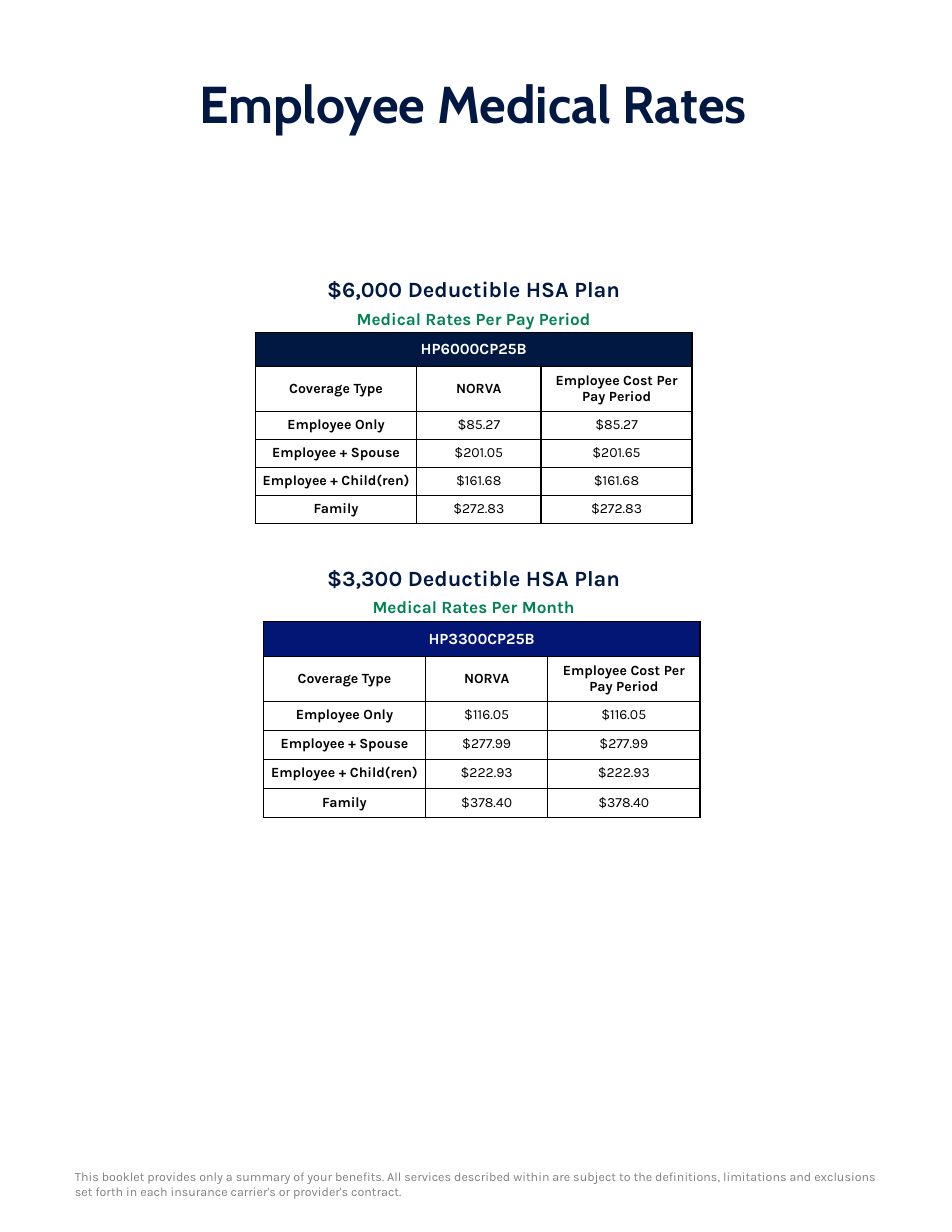
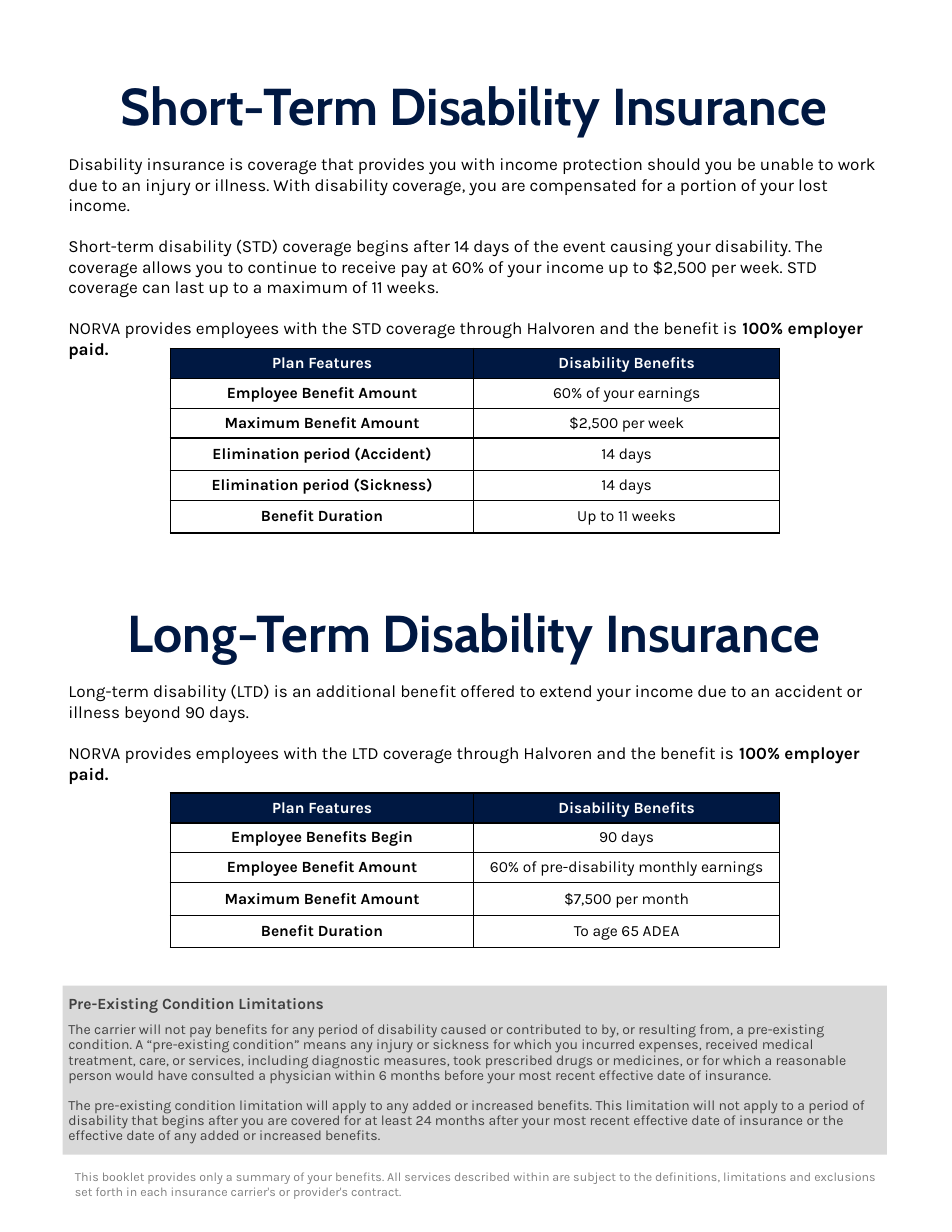
from lxml.etree import SubElement
from pptx import Presentation
from pptx.dml.color import RGBColor
from pptx.enum.shapes import MSO_SHAPE as Shape
from pptx.enum.text import MSO_ANCHOR as Anchor, PP_ALIGN as Align
from pptx.oxml import parse_xml
from pptx.oxml.ns import nsdecls, qn
from pptx.util import Inches, Pt

NAVY = RGBColor(0x00, 0x18, 0x42)
BLUE = RGBColor(0x03, 0x16, 0x75)
GREEN = RGBColor(0x00, 0x82, 0x50)
GREY = RGBColor(0x80, 0x80, 0x80)
CHARCOAL = RGBColor(0x40, 0x40, 0x40)
PALE = RGBColor(0xD9, 0xD9, 0xD9)
BLACK = RGBColor(0, 0, 0)
WHITE = RGBColor(0xFF, 0xFF, 0xFF)

HEADING_FONT, BODY_FONT = "Cabin", "Karla"
EMPLOYER, CARRIER = "NORVA", "Halvoren"
INSET = Inches(0.05)
BODY_LEFT, BODY_WIDTH = 0.56, 7.36
BODY_GAP = 13.2
PLAN_LEFT, PLAN_WIDTH = 2.28, 3.9

DISCLAIMER = (
    "This booklet provides only a summary of your beneﬁts. All services described within "
    "are subject to the deﬁnitions, limitations and exclusions set forth in each insurance "
    "carrier's or provider's contract."
)
STD_TEXT = [
    "Disability insurance is coverage that provides you with income protection should you be "
    "unable to work due to an injury or illness. With disability coverage, you are compensated "
    "for a portion of your lost income.",
    "Short-term disability (STD) coverage begins after 14 days of the event causing your "
    "disability. The coverage allows you to continue to receive pay at 60% of your income up "
    "to $2,500 per week. STD coverage can last up to a maximum of 11 weeks.",
]
LTD_TEXT = [
    "Long-term disability (LTD) is an additional benefit offered to extend your income due to "
    "an accident or illness beyond 90 days.",
]
STD_FEATURES = [
    ("Employee Benefit Amount", "60% of your earnings"),
    ("Maximum Benefit Amount", "$2,500 per week"),
    ("Elimination period (Accident)", "14 days"),
    ("Elimination period (Sickness)", "14 days"),
    ("Benefit Duration", "Up to 11 weeks"),
]
LTD_FEATURES = [
    ("Employee Benefits Begin", "90 days"),
    ("Employee Benefit Amount", "60% of pre-disability monthly earnings"),
    ("Maximum Benefit Amount", "$7,500 per month"),
    ("Benefit Duration", "To age 65 ADEA"),
]
LIMITATIONS = [
    "Pre-Existing Condition Limitations",
    "The carrier will not pay benefits for any period of disability caused or contributed to "
    "by, or resulting from, a pre-existing condition. A “pre-existing condition” means any "
    "injury or sickness for which you incurred expenses, received medical treatment, care, or "
    "services, including diagnostic measures, took prescribed drugs or medicines, or for which "
    "a reasonable person would have consulted a physician within 6 months before your most "
    "recent effective date of insurance.",
    "The pre-existing condition limitation will apply to any added or increased benefits. This "
    "limitation will not apply to a period of disability that begins after you are covered for "
    "at least 24 months after your most recent effective date of insurance or the effective "
    "date of any added or increased benefits.",
]
COVERAGE = ["Employee Only", "Employee + Spouse", "Employee + Child(ren)", "Family"]


def style_para(para, size, color, bold=False, font=BODY_FONT, align=Align.LEFT):
    """Format every run of a paragraph alike."""
    para.alignment = align
    for span in para.runs:
        span.font.name = font
        span.font.size = Pt(size)
        span.font.bold = bold
        span.font.color.rgb = color


def set_insets(target):
    """Give a text frame or a table cell the same narrow margin on all sides."""
    target.margin_left = target.margin_right = INSET
    target.margin_top = target.margin_bottom = INSET


def add_text(page, box, text, size, color, anchor=Anchor.TOP, **style):
    """Add a wrapping text box whose paragraphs share one format."""
    frame = page.shapes.add_textbox(*map(Inches, box)).text_frame
    frame.word_wrap = True
    frame.vertical_anchor = anchor
    frame.text = text
    for para in frame.paragraphs:
        style_para(para, size, color, **style)
    return frame


def add_title(page, box, text):
    """Add a large centred page title."""
    add_text(page, box, text, 33.3, NAVY, Anchor.MIDDLE,
             bold=True, font=HEADING_FONT, align=Align.CENTER)


def add_footer(page):
    """Add the disclaimer at the foot of the page."""
    add_text(page, (0.57, 10.37, 7.46, 0.4), DISCLAIMER, 8, GREY, Anchor.MIDDLE)


def add_borders(cell):
    """Draw a thin black line on each side of a cell."""
    props = cell._tc.get_or_add_tcPr()
    for index, side in enumerate("LRTB"):
        line = parse_xml(f'<a:ln{side} {nsdecls("a")} w="12700"/>')
        fill = SubElement(line, qn("a:solidFill"))
        SubElement(fill, qn("a:srgbClr"), val=str(BLACK))
        props.insert(index, line)


def add_grid(page, left, top, widths, heights):
    """Add an unbanded table with the given column widths and row heights."""
    size = map(Inches, (left, top, sum(widths), sum(heights)))
    table = page.shapes.add_table(len(heights), len(widths), *size).table
    table.first_row = table.horz_banding = False
    for column, width in zip(table.columns, widths):
        column.width = Inches(width)
    for row, height in zip(table.rows, heights):
        row.height = Inches(height)
    return table


def fill_cell(cell, text, size, color=BLACK, bold=False, fill=None, anchor=Anchor.MIDDLE):
    """Write centred text in a bordered cell."""
    cell.text = text
    cell.vertical_anchor = anchor
    set_insets(cell)
    style_para(cell.text_frame.paragraphs[0], size, color, bold, align=Align.CENTER)
    if fill is None:
        cell.fill.background()
    else:
        cell.fill.solid()
        cell.fill.fore_color.rgb = fill
    add_borders(cell)


def add_plan(page, top, name, period, code, band, rates, table_left, widths, heights):
    """Add a plan heading, its subheading and its table of rates below."""
    centred = dict(bold=True, align=Align.CENTER)
    add_text(page, (PLAN_LEFT, top, PLAN_WIDTH, 0.34), name, 14, NAVY, **centred)
    add_text(page, (PLAN_LEFT, top + 0.29, PLAN_WIDTH, 0.22), period, 11, GREEN, **centred)
    table = add_grid(page, table_left, top + 0.56, widths, heights)
    for column in range(3):
        fill_cell(table.cell(0, column), "" if column else code, 10, WHITE, True, band)
    table.cell(0, 0).merge(table.cell(0, 2))
    for column, label in enumerate(["Coverage Type", EMPLOYER, "Employee Cost Per Pay Period"]):
        fill_cell(table.cell(1, column), label, 9, bold=True)
    for row, (coverage, prices) in enumerate(zip(COVERAGE, rates), 2):
        for column, text in enumerate((coverage, *prices)):
            fill_cell(table.cell(row, column), text, 9, bold=column == 0, anchor=Anchor.TOP)


def add_disability(page, top, term, text, text_height, features, table_offset, heights):
    """Add a disability section: title, explanation and table of features."""
    add_title(page, (0.46, top, 7.55, 0.59), f"{term}-Term Disability Insurance")
    closing = (f"{EMPLOYER} provides employees with the {term[0]}TD coverage "
               f"through {CARRIER} and the beneﬁt is ")
    frame = add_text(page, (BODY_LEFT, top + 0.68, BODY_WIDTH, text_height),
                     "\n".join([*text, closing]), 11, BLACK)
    set_insets(frame)
    *leading, last = frame.paragraphs
    for para in leading:
        para.space_after = Pt(BODY_GAP)
    last.add_run().text = "100% employer paid."
    style_para(last, 11, BLACK)
    last.runs[-1].font.bold = True

    table = add_grid(page, 1.52, top + table_offset, [2.71, 2.73], heights)
    for column, label in enumerate(["Plan Features", "Disability Benefits"]):
        fill_cell(table.cell(0, column), label, 10, WHITE, True, NAVY)
    for row, feature in enumerate(features, 1):
        for column, value in enumerate(feature):
            fill_cell(table.cell(row, column), value, 10, bold=column == 0)


def add_limitations(page, box):
    """Add the shaded panel on pre-existing conditions."""
    panel = page.shapes.add_shape(Shape.RECTANGLE, *map(Inches, box))
    panel.shadow.inherit = False
    panel.fill.solid()
    panel.fill.fore_color.rgb = PALE
    panel.line.fill.background()
    frame = panel.text_frame
    frame.word_wrap = True
    frame.vertical_anchor = Anchor.MIDDLE
    set_insets(frame)
    frame.text = "\n".join(LIMITATIONS)
    for para, size, gap in zip(frame.paragraphs, (10, 9, 9), (6, 9.8, 0)):
        style_para(para, size, CHARCOAL, bold=size == 10)
        para.line_spacing = 0.9
        para.space_after = Pt(gap)


def build_rates(page):
    """Build the page of medical rates."""
    add_title(page, (0.56, 0.62, 7.33, 0.59), "Employee Medical Rates")
    add_plan(page, 2.41, "$6,000 Deductible HSA Plan", "Medical Rates Per Pay Period",
             "HP6000CP25B", NAVY,
             [("$85.27", "$85.27"), ("$201.05", "$201.65"),
              ("$161.68", "$161.68"), ("$272.83", "$272.83")],
             2.28, [1.44, 1.11, 1.35], [0.3, 0.35] + [0.24] * 4)
    add_plan(page, 4.99, "$3,300 Deductible HSA Plan", "Medical Rates Per Month",
             "HP3300CP25B", BLUE,
             [(price, price) for price in ("$116.05", "$277.99", "$222.93", "$378.40")],
             2.35, [1.45, 1.09, 1.36], [0.31, 0.34] + [0.26] * 4)
    add_footer(page)


def build_disability(page):
    """Build the page on short-term and long-term disability."""
    add_disability(page, 0.64, "Short", STD_TEXT, 1.65, STD_FEATURES, 2.47,
                   [0.26, 0.25, 0.25, 0.29, 0.25, 0.29])
    add_disability(page, 5.35, "Long", LTD_TEXT, 0.84, LTD_FEATURES, 1.73,
                   [0.26, 0.25, 0.25, 0.29, 0.29])
    add_limitations(page, (BODY_LEFT, 8.8, BODY_WIDTH, 1.51))
    add_footer(page)


def main():
    """Build and save the deck."""
    deck = Presentation()
    deck.slide_width, deck.slide_height = Inches(8.5), Inches(11)
    for build in (build_rates, build_disability):
        build(deck.slides.add_slide(deck.slide_layouts[6]))
    deck.save("out.pptx")


if __name__ == "__main__":
    main()
